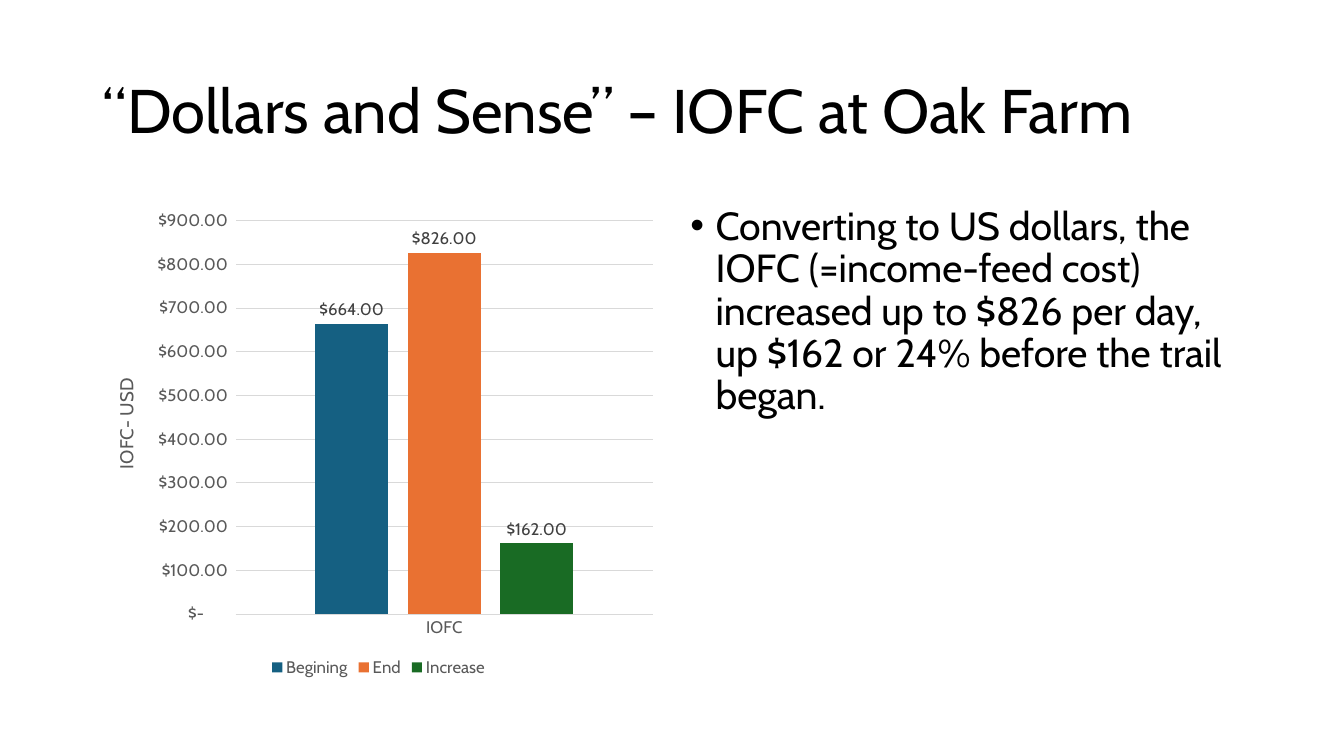
from dataclasses import dataclass

import pptx
import pptx.chart.data
import pptx.dml.color
import pptx.enum.chart
import pptx.enum.text
import pptx.oxml
import pptx.oxml.ns
import pptx.util
from pptx.util import Inches, Pt


@dataclass(frozen=True)
class Theme:
    font: str = "Cabin"
    text: str = "000000"
    axis_text: str = "595959"
    label_text: str = "404040"
    grid: str = "D9D9D9"
    bars: tuple = ("156082", "E97132", "196B24")
    title_size: float = 44
    body_size: float = 28
    axis_title_size: float = 13.3
    chart_size: float = 12


THEME = Theme()
DOLLARS = '_("$"* #,##0.00_);_("$"* \\(#,##0.00\\);_("$"* "-"??_);_(@_)'
IOFC = {"Begining": 664, "End": 826, "Increase": 162}


def rgb(color):
    return pptx.dml.color.RGBColor.from_string(color)


def style_font(font, size, color):
    font.name = THEME.font
    font.size = Pt(size)
    font.bold = False
    font.color.rgb = rgb(color)


def style_line(line):
    line.color.rgb = rgb(THEME.grid)
    line.width = Pt(0.75)


def add_text(slide, box, text, size, anchor, bullet=False):
    tf = slide.shapes.add_textbox(*map(Inches, box)).text_frame
    tf.word_wrap = True
    tf.vertical_anchor = anchor
    p = tf.paragraphs[0]
    p.text = text
    p.line_spacing = 0.9
    if bullet:
        pPr = p._p.get_or_add_pPr()
        pPr.set("marL", str(Inches(0.25)))
        pPr.set("indent", str(-Inches(0.25)))
        pPr.append(pptx.oxml.parse_xml(
            f'<a:buFont {pptx.oxml.ns.nsdecls("a")} typeface="Arial"/>'))
        pPr.append(pptx.oxml.parse_xml(
            f'<a:buChar {pptx.oxml.ns.nsdecls("a")} char="•"/>'))
    style_font(p.runs[0].font, size, THEME.text)


def manual_layout(x, y, w=None, h=None):
    """Return a c:layout element in fractions of the chart area."""
    parts = [("xMode", "edge"), ("yMode", "edge"),
             ("x", x), ("y", y), ("w", w), ("h", h)]
    if w is not None:
        parts.insert(0, ("layoutTarget", "inner"))
    inner = "".join(f'<c:{tag} val="{val}"/>' for tag, val in parts if val is not None)
    return pptx.oxml.parse_xml(
        f'<c:layout {pptx.oxml.ns.nsdecls("c")}>'
        f'<c:manualLayout>{inner}</c:manualLayout></c:layout>')


def set_layout(parent, layout, position):
    for old in parent.findall(pptx.oxml.ns.qn("c:layout")):
        parent.remove(old)
    parent.insert(position, layout)


def style_axes(chart):
    no_tick = pptx.enum.chart.XL_TICK_MARK.NONE
    for axis in (chart.category_axis, chart.value_axis):
        axis.major_tick_mark = axis.minor_tick_mark = no_tick
        style_font(axis.tick_labels.font, THEME.chart_size, THEME.axis_text)
    style_line(chart.category_axis.format.line)

    axis = chart.value_axis
    axis.minimum_scale, axis.maximum_scale, axis.major_unit = 0, 900, 100
    axis.format.line.fill.background()
    axis.has_major_gridlines = True
    style_line(axis.major_gridlines.format.line)
    axis.tick_labels.number_format = DOLLARS
    axis.tick_labels.number_format_is_linked = False
    tf = axis.axis_title.text_frame
    tf.text = "IOFC- USD"
    tf._txBody.bodyPr.set("rot", "-5400000")
    tf._txBody.bodyPr.set("vert", "horz")
    style_font(tf.paragraphs[0].runs[0].font, THEME.axis_title_size, THEME.axis_text)
    set_layout(axis.axis_title._element, manual_layout(0.03, 0.36), 1)


def add_iofc_chart(slide, box):
    data = pptx.chart.data.CategoryChartData(number_format=DOLLARS)
    data.categories = ["IOFC"]
    for name, dollars in IOFC.items():
        data.add_series(name, [dollars])
    chart = slide.shapes.add_chart(
        pptx.enum.chart.XL_CHART_TYPE.COLUMN_CLUSTERED,
        *map(Inches, box), data).chart
    style_font(chart.font, THEME.chart_size, THEME.text)
    chart.has_title = False
    style_axes(chart)

    plot = chart.plots[0]
    plot.gap_width, plot.overlap = 219, -27
    plot.vary_by_categories = False
    for series, color in zip(plot.series, THEME.bars):
        series.format.fill.solid()
        series.format.fill.fore_color.rgb = rgb(color)
        labels = series.data_labels
        labels.show_value = True
        labels.position = pptx.enum.chart.XL_LABEL_POSITION.OUTSIDE_END
        labels.number_format = DOLLARS
        labels.number_format_is_linked = False
        style_font(labels.font, THEME.chart_size, THEME.label_text)

    chart.has_legend = True
    chart.legend.position = pptx.enum.chart.XL_LEGEND_POSITION.BOTTOM
    chart.legend.include_in_layout = False
    style_font(chart.legend.font, THEME.chart_size, THEME.axis_text)
    plot_area = chart._chartSpace.chart.plotArea
    set_layout(plot_area, manual_layout(0.25, 0.04, 0.73, 0.82), 0)


def build_iofc_slide(prs):
    slide = prs.slides.add_slide(prs.slide_layouts[6])
    left, top, column, height, gap = 0.92, 2, 5.67, 4.76, 0.16
    anchors = pptx.enum.text.MSO_ANCHOR
    add_text(slide, (left, 0.4, 2 * column + gap, 1.45),
             "“Dollars and Sense” – IOFC at Oak Farm",
             THEME.title_size, anchors.MIDDLE)
    add_iofc_chart(slide, (left, top, column, height))
    add_text(slide, (left + column + gap, top, column, height),
             "Converting to US dollars, the IOFC (=income-feed cost) increased "
             "up to $826 per day, up $162 or 24% before the trail began.",
             THEME.body_size, anchors.TOP, bullet=True)


def main():
    prs = pptx.Presentation()
    prs.slide_width, prs.slide_height = Inches(13.33), Inches(7.5)
    build_iofc_slide(prs)
    prs.save("out.pptx")


if __name__ == "__main__":
    main()
